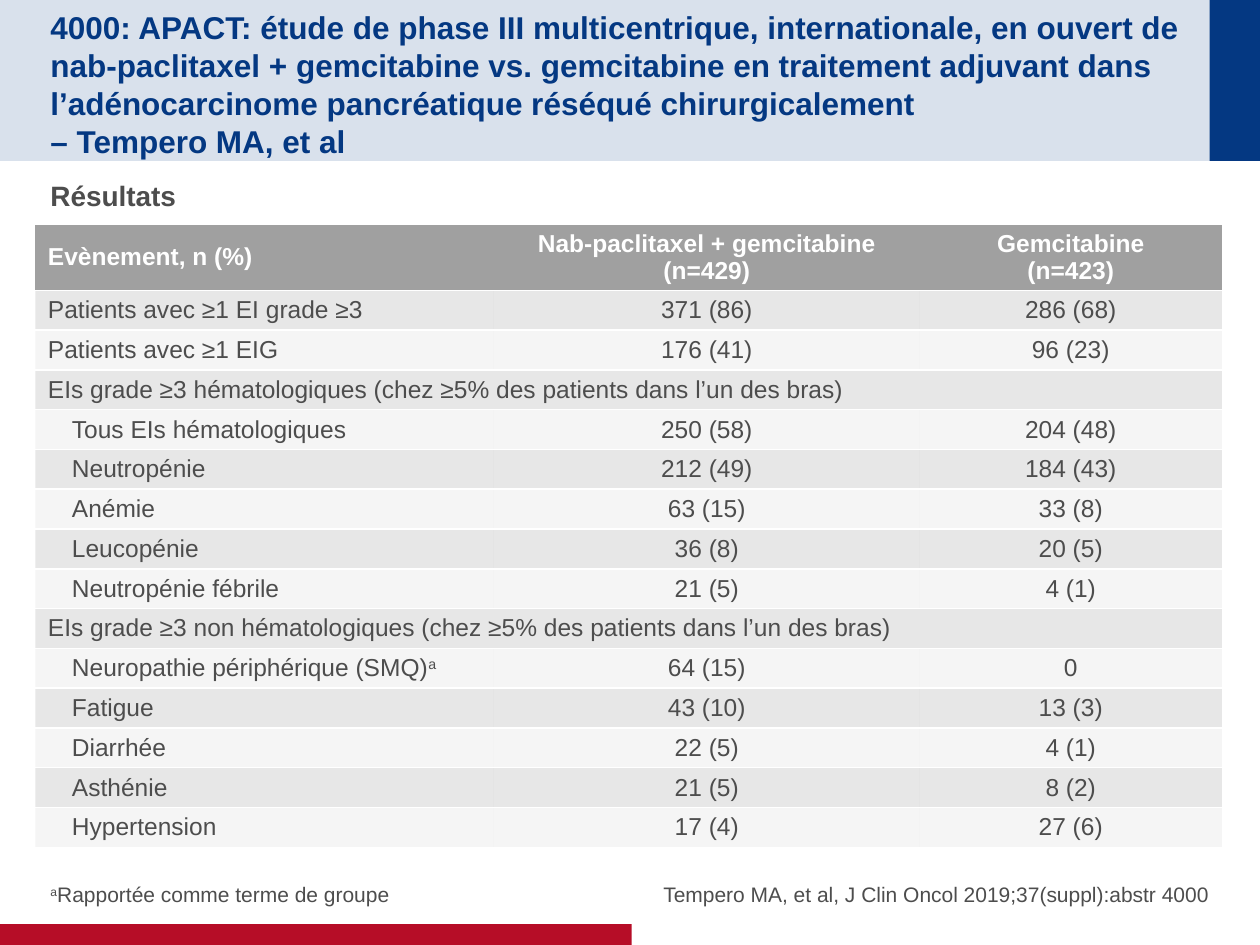
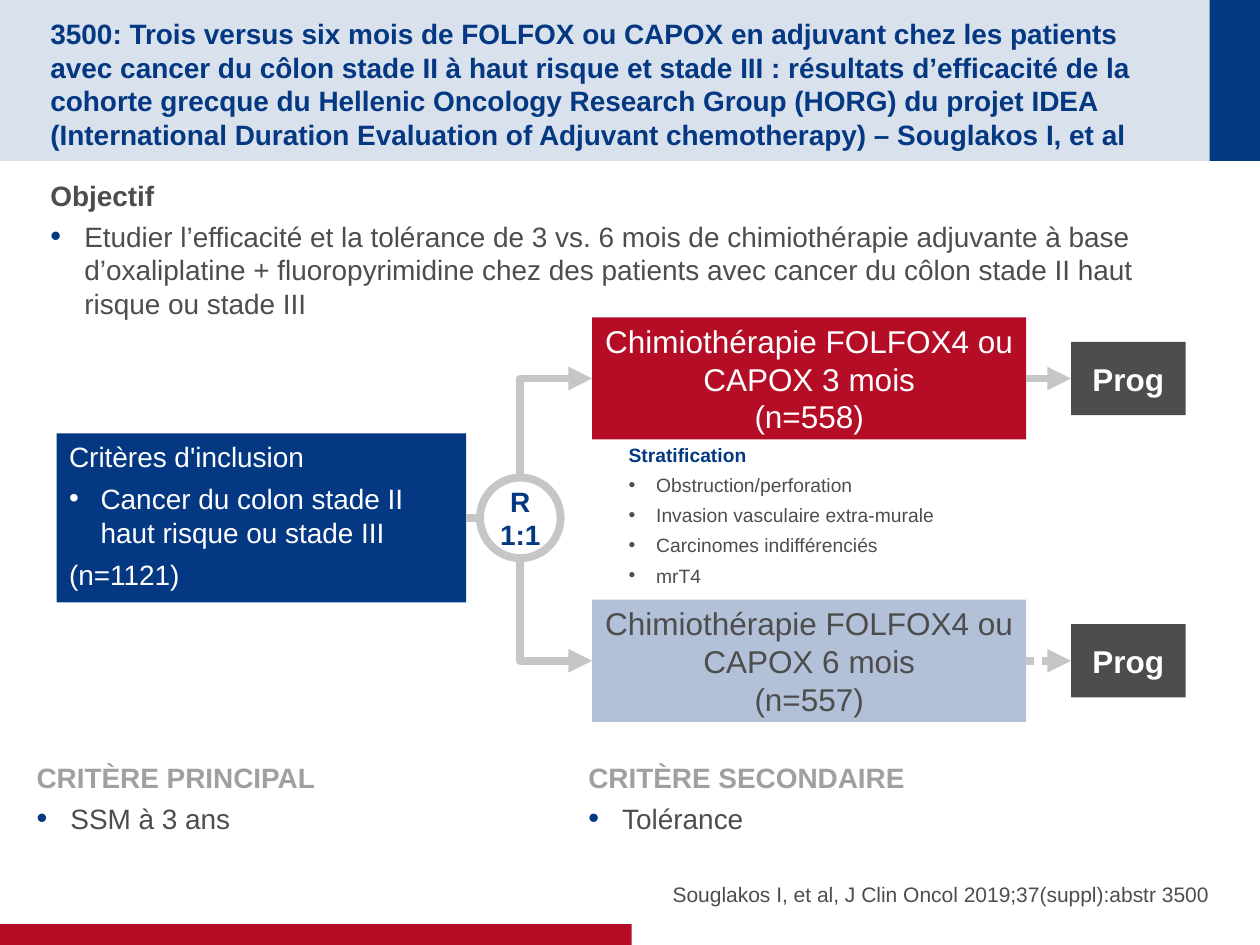
from dataclasses import dataclass

from lxml import etree
from pptx import Presentation
from pptx.dml.color import RGBColor
from pptx.enum import dml, shapes, text
from pptx.oxml import ns
from pptx.util import Pt

FONT = "Arial"
NAVY = RGBColor(0x04, 0x38, 0x82)
RED = RGBColor(0xB6, 0x0D, 0x27)
DARK = RGBColor(0x4D, 0x4D, 0x4D)
GREY = RGBColor(0xA0, 0xA0, 0xA0)
LINE_GREY = RGBColor(0xC6, 0xC6, 0xC6)
PALE_BLUE = RGBColor(0xB2, 0xC0, 0xD8)
WHITE = RGBColor(0xFF, 0xFF, 0xFF)

LEFT, CENTER, RIGHT = text.PP_ALIGN.LEFT, text.PP_ALIGN.CENTER, text.PP_ALIGN.RIGHT
TOP, MIDDLE, BOTTOM = (text.MSO_ANCHOR.TOP, text.MSO_ANCHOR.MIDDLE,
                       text.MSO_ANCHOR.BOTTOM)
RECT = shapes.MSO_SHAPE.RECTANGLE
PADDED = (7.2, 3.6, 7.2, 3.6)
FLAT = (7.2, 0, 7.2, 0)
FLUSH = (0, 3.6, 0, 3.6)
NO_GRID_STYLE = "{2D5ABB26-0587-4C30-8999-92F81FD0307C}"


@dataclass
class Box:
    x: float
    y: float
    w: float
    h: float

    @property
    def mid_y(self) -> float:
        return self.y + self.h / 2

    def lengths(self) -> tuple:
        return Pt(self.x), Pt(self.y), Pt(self.w), Pt(self.h)


@dataclass
class Band:
    box: Box
    color: RGBColor
    alpha: int = 100


@dataclass
class Arm:
    y: float
    label: str
    fill: RGBColor
    color: RGBColor
    dotted: bool = False


BANDS = [Band(Box(0, 0, 720, 92), NAVY, 15),
         Band(Box(691.2, 0, 28.8, 92), NAVY),
         Band(Box(0, 528, 361, 12), RED)]
TITLE = Box(28.8, 14.4, 648.7, 63.4)
BODY = Box(28.8, 98.6, 662.4, 373.7)
NOTE = Box(28.8, 480.2, 325.4, 38.2)
SOURCE = Box(354.2, 480.2, 337, 38.2)

HEADER = ["Evènement, n (%)", "Nab-paclitaxel + gemcitabine\n(n=429)",
          "Gemcitabine\n(n=423)"]
# Label, values, indented
EVENTS = [
    ("Patients avec ≥1 EI grade ≥3", "371 (86)", "286 (68)", False),
    ("Patients avec ≥1 EIG", "176 (41)", "96 (23)", False),
    ("EIs grade ≥3 hématologiques (chez ≥5% des patients dans l’un des bras)",
     "", "", False),
    ("Tous EIs hématologiques", "250 (58)", "204 (48)", True),
    ("Neutropénie", "212 (49)", "184 (43)", True),
    ("Anémie", "63 (15)", "33 (8)", True),
    ("Leucopénie", "36 (8)", "20 (5)", True),
    ("Neutropénie fébrile", "21 (5)", "4 (1)", True),
    ("EIs grade ≥3 non hématologiques (chez ≥5% des patients dans l’un des bras)",
     "", "", False),
    ("Neuropathie périphérique (SMQ)^a", "64 (15)", "0", True),
    ("Fatigue", "43 (10)", "13 (3)", True),
    ("Diarrhée", "22 (5)", "4 (1)", True),
    ("Asthénie", "21 (5)", "8 (2)", True),
    ("Hypertension", "17 (4)", "27 (6)", True),
]

ARMS = [
    Arm(181.4, "Chimiothérapie FOLFOX4 ou CAPOX 3 mois\n(n=558)", RED, WHITE),
    Arm(342.7, "Chimiothérapie FOLFOX4 ou CAPOX 6 mois\n(n=557)", PALE_BLUE, DARK, True),
]


# Text
def write(tf, txt: str, *, size: float = 16, color: RGBColor = DARK,
          bold: bool = False, align=LEFT, after: float = 0, indent: float = 0,
          hang: float = 0, bullet: RGBColor | None = None, bullet_size: int = 100) -> None:
    """Append a paragraph; text between ^ marks is superscript."""
    p = tf.add_paragraph() if tf.text else tf.paragraphs[0]
    p.alignment, p.space_before, p.space_after = align, Pt(0), Pt(after)
    pPr = p._p.get_or_add_pPr()
    pPr.set("marL", str(Pt(indent + hang)))
    pPr.set("indent", str(-Pt(hang)))
    if bullet is None:
        etree.SubElement(pPr, ns.qn("a:buNone"))
    else:
        clr = etree.SubElement(pPr, ns.qn("a:buClr"))
        etree.SubElement(clr, ns.qn("a:srgbClr"), val=str(bullet))
        etree.SubElement(pPr, ns.qn("a:buSzPct"), val=str(bullet_size * 1000))
        etree.SubElement(pPr, ns.qn("a:buFont"), typeface=FONT)
        etree.SubElement(pPr, ns.qn("a:buChar"), char="•")
    for i, part in enumerate(txt.split("^")):
        for j, line in enumerate(part.split("\n")):
            if j:
                p.add_line_break()
            if not line:
                continue
            r = p.add_run()
            r.text = line
            r.font.name, r.font.size, r.font.bold = FONT, Pt(size), bold
            r.font.color.rgb = color
            if i % 2:
                r.font._element.set("baseline", "30000")


def set_frame(sp, insets: tuple, anchor=TOP, wrap: bool = True):
    tf = sp.text_frame
    tf.auto_size = text.MSO_AUTO_SIZE.NONE
    tf.word_wrap, tf.vertical_anchor = wrap, anchor
    tf.margin_left, tf.margin_top, tf.margin_right, tf.margin_bottom = map(Pt, insets)
    return tf


def add_text(s, box: Box, insets: tuple = PADDED, anchor=TOP):
    return set_frame(s.shapes.add_textbox(*box.lengths()), insets, anchor)


def place(sp, box: Box, insets: tuple, anchor=TOP):
    sp.left, sp.top, sp.width, sp.height = box.lengths()
    return set_frame(sp, insets, anchor)


# Shapes and lines
def fill_with(fill, color: RGBColor, alpha: int = 100) -> None:
    fill.solid()
    fill.fore_color.rgb = color
    if alpha < 100:
        clr = fill._xPr.find(".//" + ns.qn("a:srgbClr"))
        etree.SubElement(clr, ns.qn("a:alpha"), val=str(alpha * 1000))


def add_block(s, box: Box, color: RGBColor, kind=RECT, alpha: int = 100):
    sp = s.shapes.add_shape(kind, *box.lengths())
    sp.shadow.inherit = False
    fill_with(sp.fill, color, alpha)
    sp.line.fill.background()
    return sp


def add_link(s, x1: float, y1: float, x2: float, y2: float, *,
             elbow: bool = False, arrow: str = "", dotted: bool = False):
    kind = shapes.MSO_CONNECTOR.ELBOW if elbow else shapes.MSO_CONNECTOR.STRAIGHT
    cx = s.shapes.add_connector(kind, Pt(x1), Pt(y1), Pt(x2), Pt(y2))
    spPr = cx._element.spPr
    if elbow:
        spPr.find(ns.qn("a:prstGeom")).set("prst", "bentConnector2")
    cx.line.color.rgb, cx.line.width = LINE_GREY, Pt(4.5)
    if dotted:
        cx.line.dash_style = dml.MSO_LINE.ROUND_DOT
        spPr.find(".//" + ns.qn("a:prstDash")).set("val", "sysDot")
    if arrow:
        etree.SubElement(cx.line._ln, ns.qn("a:" + arrow), type="triangle")
    etree.SubElement(spPr, ns.qn("a:effectLst"))
    return cx


# Shared slide parts
def add_bands(prs, s) -> None:
    """Draw the bands and move them behind everything on the master."""
    tree = prs.slide_master.shapes.element
    for i, band in enumerate(BANDS):
        sp = add_block(s, band.box, band.color, alpha=band.alpha)
        sp.element.nvSpPr.cNvPr.set("id", str(100 + i))
        tree.insert(2 + i, sp.element)


def add_slide(prs, title: str, title_size: float, heading: str, source: str) -> tuple:
    s = prs.slides.add_slide(prs.slide_layouts[1])
    tf = place(s.shapes.title, TITLE, (0, 3.6, 0, 0), MIDDLE)
    write(tf, title, size=title_size, color=NAVY, bold=True)
    body = place(s.placeholders[1], BODY, FLUSH)
    write(body, heading, bold=True, after=4)
    write(add_text(s, SOURCE, (0, 0, 0, 0), BOTTOM), source, size=12, align=RIGHT, after=4)
    return s, body


def add_point(tf, txt: str) -> None:
    write(tf, txt, after=4, hang=19.4, bullet=NAVY, bullet_size=110)


# Table of adverse events
def format_cell(cell, alpha: int) -> None:
    cell.vertical_anchor = MIDDLE
    cell.margin_left = cell.margin_right = Pt(7.2)
    cell.margin_top = cell.margin_bottom = Pt(2.9)
    fill_with(cell.fill, GREY, alpha)
    tcPr = cell._tc.get_or_add_tcPr()
    for i, side in enumerate(("lnT", "lnB")):
        ln = etree.Element(ns.qn("a:" + side), w=str(Pt(1)))
        solid = etree.SubElement(ln, ns.qn("a:solidFill"))
        etree.SubElement(solid, ns.qn("a:srgbClr"), val=str(WHITE))
        tcPr.insert(i, ln)


def add_events_table(s) -> None:
    head_h, row_h, widths = 37.7, 22.75, (262, 243.4, 172.6)
    box = Box(20.2, 128.2, sum(widths), head_h + row_h * len(EVENTS))
    tbl = s.shapes.add_table(len(EVENTS) + 1, 3, *box.lengths()).table
    tbl._tbl.tblPr.find(ns.qn("a:tableStyleId")).text = NO_GRID_STYLE
    for col, w in zip(tbl.columns, widths):
        col.width = Pt(w)
    for n, row in enumerate([(*HEADER, False), *EVENTS]):
        *labels, indented = row
        tbl.rows[n].height = Pt(row_h if n else head_h)
        alpha = 100 if n == 0 else 25 if n % 2 else 10
        for c, label in enumerate(labels):
            cell = tbl.cell(n, c)
            format_cell(cell, alpha)
            if label:
                write(cell.text_frame, label, size=14, color=DARK if n else WHITE,
                      bold=n == 0, align=CENTER if c else LEFT,
                      indent=13.7 if indented and c == 0 else 0)
        if not labels[1]:
            tbl.cell(n, 0).merge(tbl.cell(n, 2))


def results_slide(prs) -> None:
    s, _ = add_slide(
        prs, "4000: APACT: étude de phase III multicentrique, internationale, en ouvert "
        "de nab-paclitaxel + gemcitabine vs. gemcitabine en traitement adjuvant dans "
        "l’adénocarcinome pancréatique réséqué chirurgicalement \n– Tempero MA, et al",
        18, "Résultats", "Tempero MA, et al, J Clin Oncol 2019;37(suppl):abstr 4000")
    add_bands(prs, s)
    add_events_table(s)
    write(add_text(s, NOTE, (0, 0, 0, 0), BOTTOM),
          "^a^Rapportée comme terme de groupe", size=12, after=4)


# Trial design
def add_trial_design(s) -> None:
    inclusion = Box(32.4, 247.7, 234, 96.5)
    ring = Box(274.3, 272.9, 46.1, 46.1)
    ring_x = ring.x + ring.w / 2

    entry = add_block(s, inclusion, NAVY, shapes.MSO_SHAPE.ROUNDED_RECTANGLE)
    entry.adjustments[0] = 0
    tf = set_frame(entry, PADDED)
    write(tf, "Critères d'inclusion", color=WHITE, after=4.8)
    write(tf, "Cancer du colon stade II haut risque ou stade III", color=WHITE,
          after=4.8, hang=18, bullet=WHITE)
    write(tf, "(n=1121)", color=WHITE, after=4.8)

    link = add_link(s, inclusion.x + inclusion.w, inclusion.mid_y, ring.x, ring.mid_y)
    link.begin_connect(entry, 3)

    sp = add_block(s, ring, WHITE, shapes.MSO_SHAPE.OVAL)
    sp.fill.background()
    sp.line.color.rgb, sp.line.width = LINE_GREY, Pt(4.5)
    tf = set_frame(sp, PADDED, MIDDLE, wrap=False)
    for line in ("R", "1:1"):
        write(tf, line, color=NAVY, bold=True, align=CENTER)

    for arm in ARMS:
        box = Box(338.4, arm.y, 248, 69.8)
        prog = Box(612, box.mid_y - 20.9, 65.5, 41.8)
        ring_y = ring.y if box.mid_y < ring.mid_y else ring.y + ring.h
        add_link(s, box.x, box.mid_y, ring_x, ring_y, elbow=True, arrow="headEnd")
        treatment = add_block(s, box, arm.fill)
        write(set_frame(treatment, FLAT, MIDDLE), arm.label, size=18,
              color=arm.color, align=CENTER)
        end = add_block(s, prog, DARK)
        write(set_frame(end, FLAT, MIDDLE), "Prog", size=18, color=WHITE,
              bold=True, align=CENTER)
        link = add_link(s, box.x + box.w, box.mid_y, prog.x, prog.mid_y,
                        arrow="tailEnd", dotted=arm.dotted)
        link.begin_connect(treatment, 3)
        link.end_connect(end, 1)

    tf = add_text(s, Box(352.1, 249.8, 347, 70.6))
    write(tf, "Stratification", size=11, color=NAVY, bold=True, after=4)
    for factor in ("Obstruction/perforation", "Invasion vasculaire extra-murale",
                   "Carcinomes indifférenciés", "mrT4"):
        write(tf, factor, size=11, after=4, hang=15.8, bullet=DARK)


def design_slide(prs) -> None:
    s, body = add_slide(
        prs, "3500: Trois versus six mois de FOLFOX ou CAPOX en adjuvant chez les patients "
        "avec cancer du côlon stade II à haut risque et stade III : résultats d’efficacité "
        "de la cohorte grecque du Hellenic Oncology Research Group (HORG) du projet IDEA "
        "(International Duration Evaluation of Adjuvant chemotherapy) – Souglakos I, et al",
        16, "Objectif", "Souglakos I, et al, J Clin Oncol 2019;37(suppl):abstr 3500")
    add_point(body, "Etudier l’efficacité et la tolérance de 3 vs. 6 mois de chimiothérapie "
              "adjuvante à base d’oxaliplatine + fluoropyrimidine chez des patients avec "
              "cancer du côlon stade II haut risque ou stade III")
    add_trial_design(s)
    for x, heading, endpoint in ((20.9, "CRITÈRE PRINCIPAL", "SSM à 3 ans"),
                                 (336.2, "CRITÈRE SECONDAIRE", "Tolérance")):
        tf = add_text(s, Box(x, 431.3, 340, 72), FLUSH)
        write(tf, heading, color=GREY, bold=True, after=4)
        add_point(tf, endpoint)


def main() -> None:
    prs = Presentation()
    prs.slide_width, prs.slide_height = Pt(720), Pt(540)
    results_slide(prs)
    design_slide(prs)
    prs.save("out.pptx")


if __name__ == "__main__":
    main()
